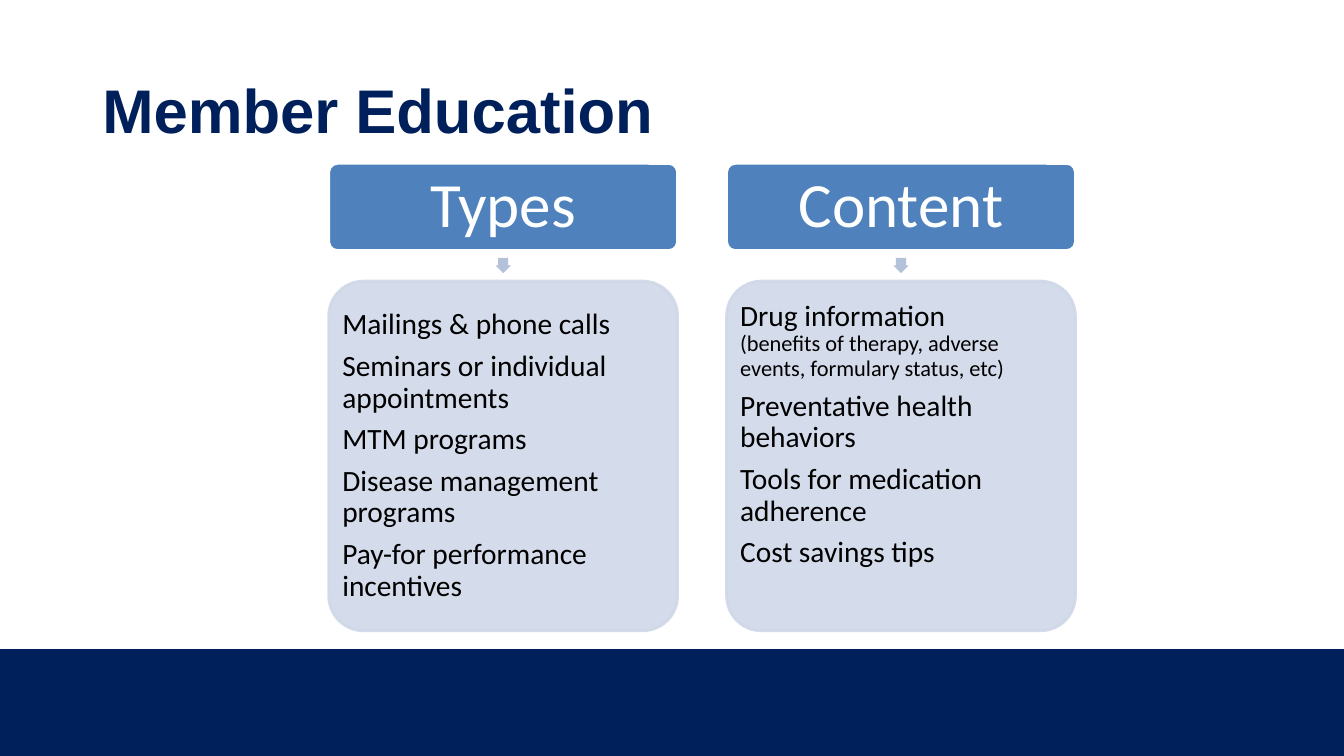
from lxml import etree
from pptx import Presentation
from pptx.dml.color import RGBColor
from pptx.enum.shapes import MSO_SHAPE
from pptx.enum.text import MSO_ANCHOR, PP_ALIGN
from pptx.oxml.ns import qn
from pptx.util import Pt

RECT, ROUND, ARROW = MSO_SHAPE.RECTANGLE, MSO_SHAPE.ROUNDED_RECTANGLE, MSO_SHAPE.DOWN_ARROW
LEFT, CENTER = PP_ALIGN.LEFT, PP_ALIGN.CENTER
NAVY, BLUE, PALE, MID = "00205B", "4F81BD", "D0D8E8", "B3C1DB"
WHITE, BLACK = "FFFFFF", "000000"

TITLE = "Member Education"
# Each column: heading, items as (text, small print), extra room under the items
COLUMNS = [
    ("Types", [
        ("Mailings & phone calls", ""),
        ("Seminars or individual appointments", ""),
        ("MTM programs", ""),
        ("Disease management programs", ""),
        ("Pay-for performance incentives", ""),
    ], 0),
    ("Content", [
        ("Drug information ", "(benefits of therapy, adverse events, formulary status, etc)"),
        ("Preventative health behaviors", ""),
        ("Tools for medication adherence", ""),
        ("Cost savings tips", ""),
    ], 30),
]

WIDE, HIGH = 960, 540
COL_X, COL_W, STEP = 234.8, 249.2, 284.2
HEAD_Y, HEAD_H = 116.7, 62.3
TIP_Y, TIP = 184.2, 10.9
CARD_Y, CARD_H = 200.8, 249.8
BAR_Y = 463.7


def color(code):
    return RGBColor.from_string(code)


def fade(fill):
    """Make a solid fill or line 90% opaque."""
    tint = fill._xPr.find(qn("a:solidFill"))[0]
    etree.SubElement(tint, qn("a:alpha")).set("val", "90000")


def block(kind, x, y, w, h, fill, line=None, clear=False):
    shape = slide.shapes.add_shape(kind, Pt(x), Pt(y), Pt(w), Pt(h))
    shape.shadow.inherit = False
    shape.fill.solid()
    shape.fill.fore_color.rgb = color(fill)
    if line:
        shape.line.color.rgb = color(line)
        shape.line.width = Pt(2)
    else:
        shape.line.fill.background()
    if clear:
        fade(shape.fill)
        fade(shape.line.fill)
    return shape


def setup(shape, side, top, low):
    frame = shape.text_frame
    frame.word_wrap = True
    frame.vertical_anchor = MSO_ANCHOR.MIDDLE
    frame.margin_left = frame.margin_right = Pt(side)
    frame.margin_top, frame.margin_bottom = Pt(top), Pt(low)
    return frame


def style(para, align=LEFT, after=0):
    para.alignment = align
    para.line_spacing = 0.9
    para.space_after = Pt(after)


def write(para, text, size, tint, face="Calibri", bold=False):
    run = para.add_run()
    run.text = text
    run.font.size, run.font.name, run.font.bold = Pt(size), face, bold
    run.font.color.rgb = color(tint)


prs = Presentation()
prs.slide_width, prs.slide_height = Pt(WIDE), Pt(HIGH)
slide = prs.slides.add_slide(prs.slide_layouts[6])

block(RECT, 0, BAR_Y, WIDE, HIGH - BAR_Y, NAVY)
box = slide.shapes.add_textbox(Pt(66), Pt(28.8), Pt(828), Pt(104.4))
para = setup(box, 7.2, 3.6, 3.6).paragraphs[0]
style(para)
write(para, TITLE, 44, NAVY, "Arial", True)

for i, (name, items, room) in enumerate(COLUMNS):
    x = COL_X + i * STEP
    head = block(ROUND, x, HEAD_Y, COL_W, HEAD_H, BLUE, WHITE)
    head.adjustments[0] = 0.1
    para = setup(head, 4, 4, 4).paragraphs[0]
    style(para, CENTER)
    write(para, name, 45, WHITE)

    tip = block(ARROW, x + (COL_W - TIP) / 2, TIP_Y, TIP, TIP, MID)
    tip.adjustments[0], tip.adjustments[1] = 0.667, 0.5

    card = block(ROUND, x, CARD_Y, COL_W, CARD_H, PALE, PALE, True)
    card.adjustments[0] = 0.1
    frame = setup(card, 2.4, 2.4, 2.4 + room)
    for j, (text, small) in enumerate(items):
        para = frame.add_paragraph() if j else frame.paragraphs[0]
        style(para, after=7)
        write(para, text, 21, BLACK)
        if small:
            para.add_line_break()
            write(para, small, 16, BLACK)

prs.save("out.pptx")
